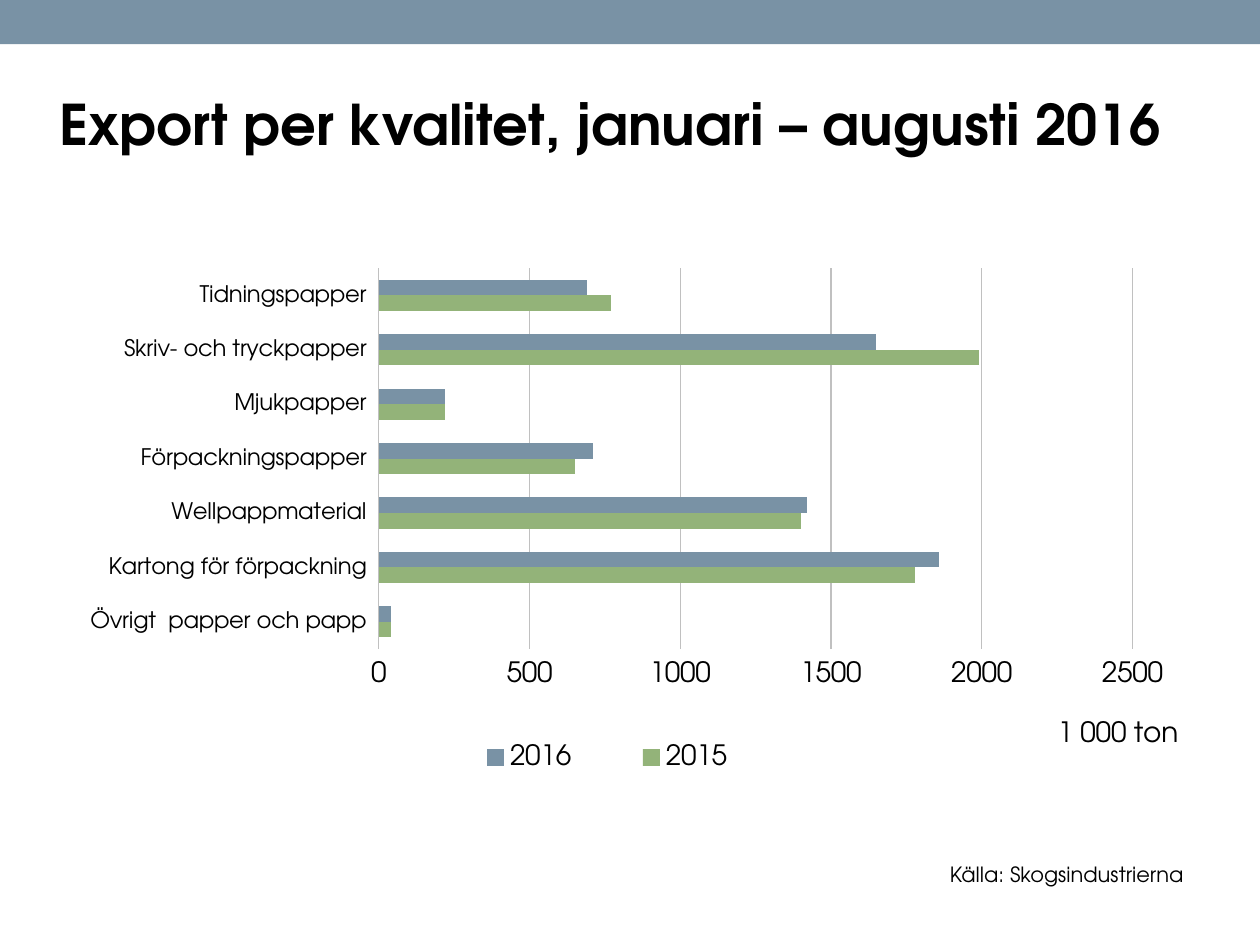
from lxml.etree import SubElement
from pptx import Presentation
from pptx.chart.data import CategoryChartData
from pptx.dml.color import RGBColor
from pptx.enum.chart import XL_CHART_TYPE, XL_LEGEND_POSITION, XL_TICK_MARK
from pptx.enum.shapes import MSO_SHAPE
from pptx.enum.text import MSO_ANCHOR, MSO_AUTO_SIZE, PP_ALIGN
from pptx.oxml.ns import qn
from pptx.util import Cm, Pt

FONT = "TeX Gyre Adventor"
BLACK, BLUE, GREEN, GREY = "000000", "7992A5", "93B379", "C0C0C0"
SLIDE_WIDTH, SLIDE_HEIGHT = 25.4, 19.05
MARGIN = 1.19
CONTENT_WIDTH = SLIDE_WIDTH - 2 * MARGIN

EXPORTS = [
    # grade, 2015, 2016 (1 000 ton), from the bottom up
    ("Övrigt  papper och papp", 40, 40),
    ("Kartong för förpackning", 1780, 1860),
    ("Wellpappmaterial", 1400, 1420),
    ("Förpackningspapper", 650, 710),
    ("Mjukpapper", 220, 220),
    ("Skriv- och tryckpapper", 1990, 1650),
    ("Tidningspapper", 770, 690),
]


def rgb(color):
    return RGBColor.from_string(color)


def style_font(font, size, bold=False):
    font.name = FONT
    font.size = Pt(size)
    font.bold = bold
    font.color.rgb = rgb(BLACK)


def set_layout(parent, index, target=None, **fractions):
    """Fix a chart part at fractions (x, y, w, h) of the chart area."""
    layout = parent.find(qn("c:layout"))
    if layout is not None:
        parent.remove(layout)
    layout = SubElement(parent, qn("c:layout"))
    parent.insert(index, layout)
    manual = SubElement(layout, qn("c:manualLayout"))
    if target:
        SubElement(manual, qn("c:layoutTarget")).set("val", target)
    for side in ("x", "y"):
        SubElement(manual, qn(f"c:{side}Mode")).set("val", "edge")
    for side, fraction in fractions.items():
        SubElement(manual, qn(f"c:{side}")).set("val", str(fraction))


def add_band(slide, left, top, width, height):
    band = slide.shapes.add_shape(
        MSO_SHAPE.RECTANGLE, Cm(left), Cm(top), Cm(width), Cm(height))
    band.shadow.inherit = False
    band.fill.solid()
    band.fill.fore_color.rgb = rgb(BLUE)
    band.line.fill.background()


def add_heading(slide, left, top, width, height):
    heading = slide.shapes.title
    heading.left, heading.top = Cm(left), Cm(top)
    heading.width, heading.height = Cm(width), Cm(height)
    frame = heading.text_frame
    frame.margin_left = frame.margin_right = 0
    frame.margin_top = frame.margin_bottom = 0
    frame.vertical_anchor = MSO_ANCHOR.BOTTOM
    frame.auto_size = MSO_AUTO_SIZE.NONE
    frame.text = "Export per kvalitet, januari – augusti 2016"
    paragraph = frame.paragraphs[0]
    paragraph.alignment = PP_ALIGN.LEFT
    paragraph.line_spacing = 0.8
    style_font(paragraph.font, 32, bold=True)


def format_axes(chart):
    grades, tonnage = chart.category_axis, chart.value_axis
    for axis in (grades, tonnage):
        axis.major_tick_mark = XL_TICK_MARK.OUTSIDE
        axis.minor_tick_mark = XL_TICK_MARK.NONE
        axis.format.line.fill.background()
    style_font(grades.tick_labels.font, 13)
    style_font(tonnage.tick_labels.font, 16)
    tonnage.minimum_scale, tonnage.maximum_scale = 0, 2500
    tonnage.major_unit = 500
    tonnage.has_major_gridlines = True
    gridline = tonnage.major_gridlines.format.line
    gridline.color.rgb = rgb(GREY)
    gridline.width = Pt(0.75)
    unit = tonnage.axis_title
    unit.text_frame.text = "1 000 ton"
    style_font(unit.text_frame.paragraphs[0].font, 16)
    set_layout(unit._element, 1, x=0.87, y=0.87)


def add_export_chart(slide, left, top, width, height):
    grades, tons_2015, tons_2016 = zip(*EXPORTS)
    exports = CategoryChartData()
    exports.categories = grades
    exports.add_series("2015", tons_2015)
    exports.add_series("2016", tons_2016)
    chart = slide.shapes.add_chart(
        XL_CHART_TYPE.BAR_CLUSTERED,
        Cm(left), Cm(top), Cm(width), Cm(height), exports).chart
    chart.has_title = False
    style_font(chart.font, 16)

    bars = chart.plots[0]
    bars.gap_width = 150
    bars.overlap = 0
    bars.vary_by_categories = False
    for year, color in zip(bars.series, (GREEN, BLUE)):
        year.format.fill.solid()
        year.format.fill.fore_color.rgb = rgb(color)
    set_layout(bars._element.getparent(), 0, "inner",
               x=0.28, y=0.11, w=0.66, h=0.65)
    format_axes(chart)

    chart.has_legend = True
    chart.legend.position = XL_LEGEND_POSITION.RIGHT
    chart.legend.include_in_layout = False
    style_font(chart.legend.font, 16)
    set_layout(chart.legend._element, 1, x=0.32, y=0.91, w=0.32, h=0.07)


def add_source(slide, left, top, width, height):
    source = slide.shapes.add_textbox(
        Cm(left), Cm(top), Cm(width), Cm(height))
    frame = source.text_frame
    frame.word_wrap = False
    frame.auto_size = MSO_AUTO_SIZE.SHAPE_TO_FIT_TEXT
    frame.text = "Källa: Skogsindustrierna"
    style_font(frame.paragraphs[0].font, 12)


def main():
    presentation = Presentation()
    presentation.slide_width = Cm(SLIDE_WIDTH)
    presentation.slide_height = Cm(SLIDE_HEIGHT)
    slide = presentation.slides.add_slide(presentation.slide_layouts[5])
    add_band(slide, 0, 0, SLIDE_WIDTH, 0.89)
    add_heading(slide, MARGIN, 1.04, CONTENT_WIDTH, 2.11)
    add_export_chart(slide, MARGIN, 4.11, CONTENT_WIDTH, 11.81)
    add_source(slide, 18.9, 17.25, 5.31, 0.76)
    presentation.save("out.pptx")


if __name__ == "__main__":
    main()
